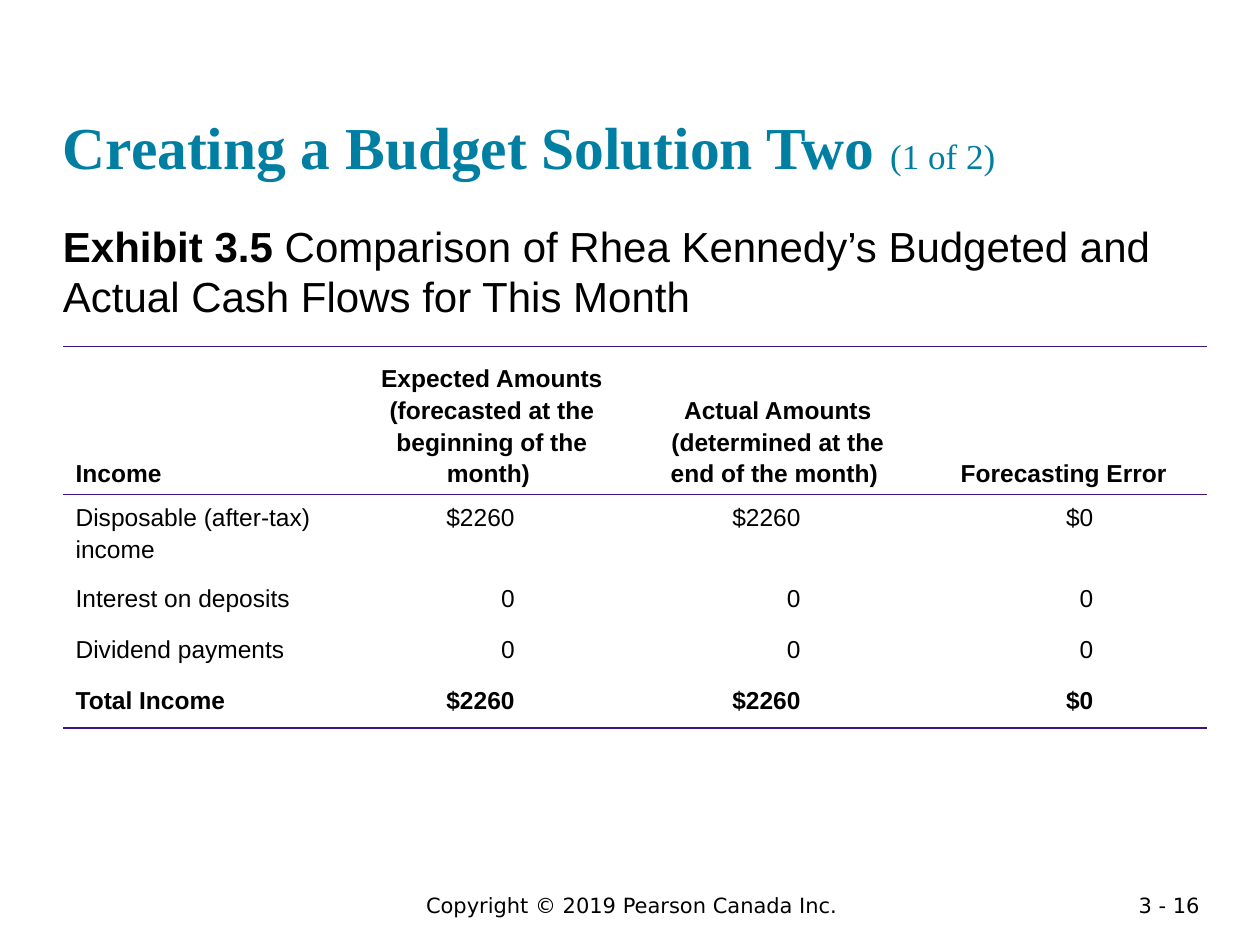
import pptx
import pptx.util
import pptx.dml.color
import pptx.enum.text
import pptx.oxml
import pptx.oxml.ns

Pt = pptx.util.Pt
Align = pptx.enum.text.PP_ALIGN
Anchor = pptx.enum.text.MSO_ANCHOR

THEME = {
    "title": "007FA3", "text": "000000", "rule": "3C1581",
    "serif": "Times New Roman", "sans": "Arial", "foot": "DejaVu Sans",
    "head": 34, "part": 20, "lead": 24, "cell": 14, "small": 12,
}
TITLE = [("Creating a Budget Solution Two ", True, THEME["head"]),
         ("(1 of 2)", False, THEME["part"])]
LEAD = [("Exhibit 3.5 ", True, THEME["lead"]),
        ("Comparison of Rhea Kennedy’s Budgeted and Actual Cash Flows for This Month",
         False, THEME["lead"])]
COPY = [("Copyright © 2019 Pearson Canada Inc.", False, THEME["small"])]
PAGE = [("3 - 16", False, THEME["small"])]
ROWS = [
    ("Income", "Expected Amounts (forecasted at the beginning of the month) ",
     "Actual Amounts (determined at the end of the month) ", "Forecasting Error"),
    ("Disposable (after-tax) income", "$2260 ", "$2260 ", "$0"),
    ("Interest on deposits", "0 ", "0 ", "0"),
    ("Dividend payments", "0 ", "0 ", "0"),
    ("Total Income", "$2260 ", "$2260 ", "$0"),
]
TALL = [79.2, 43.4, 29.2, 29.2, 29.2]
LEFT, WIDE = 36, 163.4
PLAIN = "{2D5ABB26-0587-4C30-8999-92F81FD0307C}"


def write(frame, runs, font=THEME["sans"], color=THEME["text"],
          align=Align.LEFT, space=None):
    para = frame.paragraphs[0]
    para.alignment = align
    para.line_spacing = space
    for text, bold, size in runs:
        run = para.add_run()
        run.text = text
        run.font.name = font
        run.font.size = Pt(size)
        run.font.bold = bold
        run.font.color.rgb = pptx.dml.color.RGBColor.from_string(color)


def place(slide, area, runs, inset=(0, 0), anchor=Anchor.TOP, **form):
    frame = slide.shapes.add_textbox(*map(Pt, area)).text_frame
    frame.word_wrap = True
    frame.vertical_anchor = anchor
    frame.margin_left = frame.margin_right = Pt(inset[0])
    frame.margin_top = frame.margin_bottom = Pt(inset[1])
    write(frame, runs, **form)


def rule(cell, sides):
    props = cell._tc.get_or_add_tcPr()
    for spot, side in enumerate(sides):
        props.insert(spot, pptx.oxml.parse_xml(
            f'<a:{side} {pptx.oxml.ns.nsdecls("a")} w="{Pt(1)}"><a:solidFill>'
            f'<a:srgbClr val="{THEME["rule"]}"/></a:solidFill></a:{side}>'))


def budget(slide):
    last = len(ROWS) - 1
    count = len(ROWS[0])
    table = slide.shapes.add_table(
        len(ROWS), count, Pt(LEFT), Pt(198),
        Pt(WIDE * count), Pt(sum(TALL))).table
    table.horz_banding = table.first_row = False
    table._tbl.tblPr.find(pptx.oxml.ns.qn("a:tableStyleId")).text = PLAIN
    for col in table.columns:
        col.width = Pt(WIDE)
    edges = {0: ("lnT", "lnB"), last: ("lnB",)}
    for r, row in enumerate(ROWS):
        table.rows[r].height = Pt(TALL[r])
        for c, text in enumerate(row):
            cell = table.cell(r, c)
            cell.fill.background()
            align = Align.LEFT
            if r == 0:
                cell.vertical_anchor = Anchor.BOTTOM
            if c:
                align = Align.RIGHT if r else Align.CENTER
                if r:
                    cell.margin_right = Pt(64.8)
            write(cell.text_frame, [(text, r in (0, last), THEME["cell"])],
                  align=align, space=1.15)
            rule(cell, edges.get(r, ()))


def main():
    deck = pptx.Presentation()
    deck.slide_width, deck.slide_height = Pt(720), Pt(540)
    slide = deck.slides.add_slide(deck.slide_layouts[6])
    place(slide, (118, 506.2, 486, 21.6), COPY, inset=(7.2, 3.6),
          font=THEME["foot"], align=Align.CENTER)
    place(slide, (620.6, 506.2, 72, 15.8), PAGE, inset=(7.2, 3.6),
          font=THEME["foot"], align=Align.RIGHT)
    place(slide, (LEFT, 17.3, 648, 86.4), TITLE, anchor=Anchor.BOTTOM,
          font=THEME["serif"], color=THEME["title"])
    place(slide, (LEFT, 126, 648, 66.2), LEAD)
    budget(slide)
    deck.save("out.pptx")


if __name__ == "__main__":
    main()
